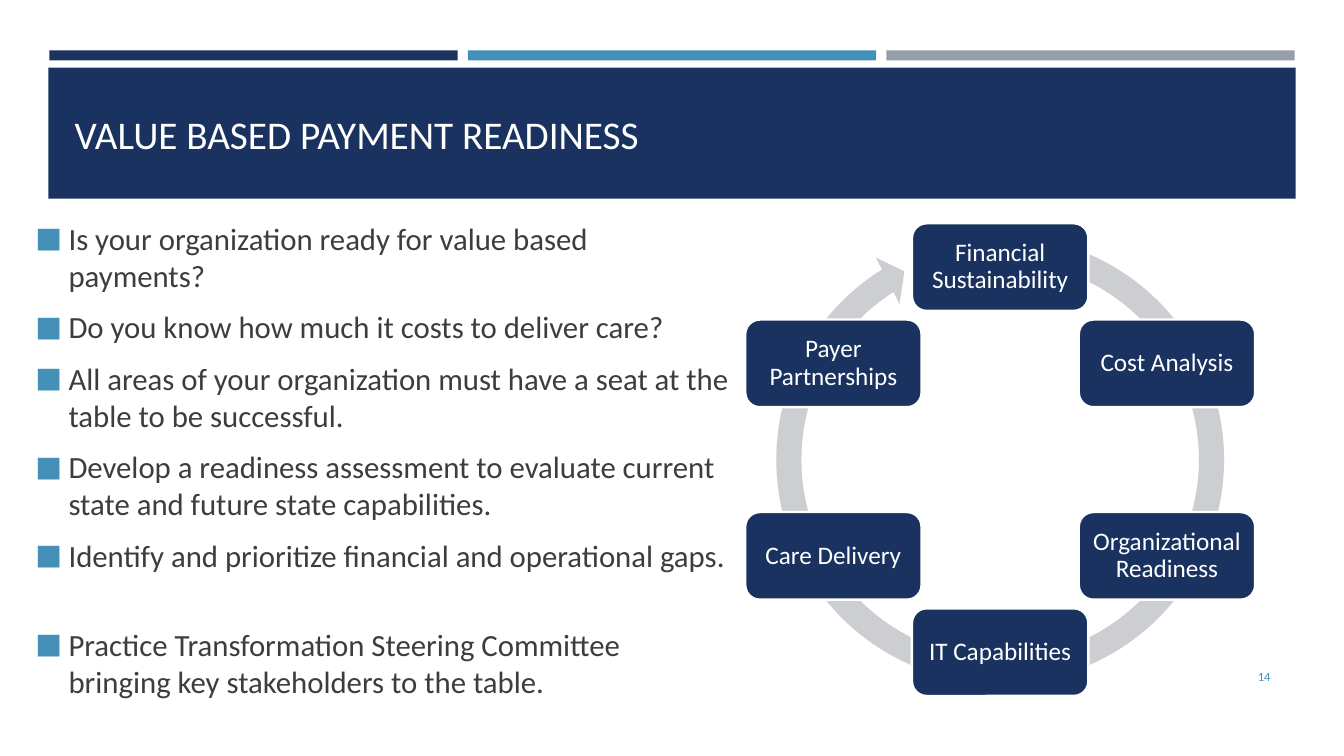
import math

from lxml import etree
from pptx import Presentation
from pptx import util as u
from pptx.dml.color import RGBColor
from pptx.enum import shapes, text
from pptx.oxml.ns import qn

NAVY, BLUE, GREY, WHITE = "1A3260", "4590B8", "969FA7", "FFFFFF"
INK, RING = "3D3D3D", "CDCED2"

QUESTIONS = [
    "Is your organization ready for value based payments?",
    "Do you know how much it costs to deliver care?",
    "All areas of your organization must have a seat at the table to be successful.",
    "Develop a readiness assessment to evaluate current state and future state capabilities.",
    "Identify and prioritize financial and operational gaps.",
    "Practice Transformation Steering Committee bringing key stakeholders to the table.",
]
CAPABILITIES = [
    "Financial Sustainability",
    "Cost Analysis",
    "Organizational Readiness",
    "IT Capabilities",
    "Care Delivery",
    "Payer Partnerships",
]


def rgb(value):
    return RGBColor.from_string(value)


def write(paragraph, words, size=18, color=WHITE, font="Calibri",
          align=text.PP_ALIGN.LEFT, before=0, after=0, spacing=1.0):
    run = paragraph.add_run()
    run.text = words
    run.font.name = font
    run.font.size = u.Pt(size)
    run.font.color.rgb = rgb(color)
    paragraph.alignment = align
    paragraph.space_before = u.Pt(before)
    paragraph.space_after = u.Pt(after)
    paragraph.line_spacing = spacing


def add_bullet(paragraph, color, indent=0.33):
    props = paragraph._p.get_or_add_pPr()
    props.set("marL", str(u.Inches(indent)))
    props.set("indent", str(u.Inches(-indent)))
    tint = etree.SubElement(props, qn("a:buClr"))
    etree.SubElement(tint, qn("a:srgbClr"), val=color)
    etree.SubElement(props, qn("a:buSzPct"), val="92000")
    etree.SubElement(props, qn("a:buFont"), typeface="Calibri")
    etree.SubElement(props, qn("a:buChar"), char="■")


class SlideBuilder:
    def __init__(self, slide):
        self.slide = slide

    def place(self, item, left, top, width, height):
        item.left, item.top = u.Inches(left), u.Inches(top)
        item.width, item.height = u.Inches(width), u.Inches(height)

    def frame(self, item, anchor=text.MSO_ANCHOR.MIDDLE):
        area = item.text_frame
        area.word_wrap = True
        area.auto_size = text.MSO_AUTO_SIZE.NONE
        area.vertical_anchor = anchor
        return area

    def shape(self, kind, left, top, width, height, fill, line=None):
        item = self.slide.shapes.add_shape(
            kind, *map(u.Inches, (left, top, width, height)))
        item.shadow.inherit = False
        item.fill.solid()
        item.fill.fore_color.rgb = rgb(fill)
        if line:
            item.line.color.rgb = rgb(line)
            item.line.width = u.Pt(1.75)
        else:
            item.line.fill.background()
        return item

    def bar(self, *box, fill):
        self.shape(shapes.MSO_SHAPE.RECTANGLE, *box, fill)

    def title(self, words, *box):
        heading = self.slide.shapes.title
        self.place(heading, *box)
        write(self.frame(heading).paragraphs[0], words, size=28)

    def bullets(self, lines, *box):
        body = self.slide.placeholders[1]
        self.place(body, *box)
        area = self.frame(body, text.MSO_ANCHOR.TOP)
        area.margin_top = u.Inches(0.1)
        for index, line in enumerate(lines):
            paragraph = area.paragraphs[0] if index == 0 else area.add_paragraph()
            closing = index == len(lines) - 1
            write(paragraph, line, size=22, color=INK,
                  before=31 if closing else 4.4, after=6)
            add_bullet(paragraph, BLUE)

    def label(self, words, *box):
        item = self.slide.shapes.add_textbox(*map(u.Inches, box))
        write(self.frame(item).paragraphs[0], words, size=9, color=BLUE,
              align=text.PP_ALIGN.RIGHT)

    def cycle(self, steps, center_x, center_y, radius):
        size = 4.71
        arrow = self.shape(shapes.MSO_SHAPE.CIRCULAR_ARROW, center_x - size / 2,
                           center_y - size / 2, size, size, RING)
        for index, value in enumerate((0.053, 3.126, 142.705, 171.023, 0.055)):
            arrow.adjustments[index] = value
        width, height = 1.75, 0.87
        for index, step in enumerate(steps):
            angle = math.tau * index / len(steps)
            node = self.shape(
                shapes.MSO_SHAPE.ROUNDED_RECTANGLE,
                center_x + radius * math.sin(angle) - width / 2,
                center_y - radius * math.cos(angle) - height / 2,
                width, height, NAVY, WHITE)
            area = self.frame(node)
            area.margin_left = area.margin_right = u.Inches(0.07)
            area.margin_top = area.margin_bottom = u.Inches(0.07)
            write(area.paragraphs[0], step, align=text.PP_ALIGN.CENTER, spacing=0.9)


def main():
    deck = Presentation()
    deck.slide_width, deck.slide_height = u.Inches(13.33), u.Inches(7.5)
    page = SlideBuilder(deck.slides.add_slide(deck.slide_layouts[1]))
    for index, color in enumerate((NAVY, BLUE, GREY)):
        page.bar(0.49 + 4.15 * index, 0.5, 4.05, 0.1, fill=color)
    banner = page.shape(shapes.MSO_SHAPE.RECTANGLE, 0.48, 0.67, 12.37, 1.3, NAVY)
    tree = banner._element.getparent()
    tree.append(page.slide.shapes.title._element)
    tree.append(page.slide.placeholders[1]._element)
    page.title("VALUE BASED PAYMENT READINESS", 0.64, 0.77, 12.06, 1.11)
    page.bullets(QUESTIONS, 0.25, 2.08, 7.08, 5.52)
    page.label("14", 11.55, 6.51, 1.15, 0.4)
    page.cycle(CAPABILITIES, 9.92, 4.56, 1.91)
    deck.save("out.pptx")


if __name__ == "__main__":
    main()
